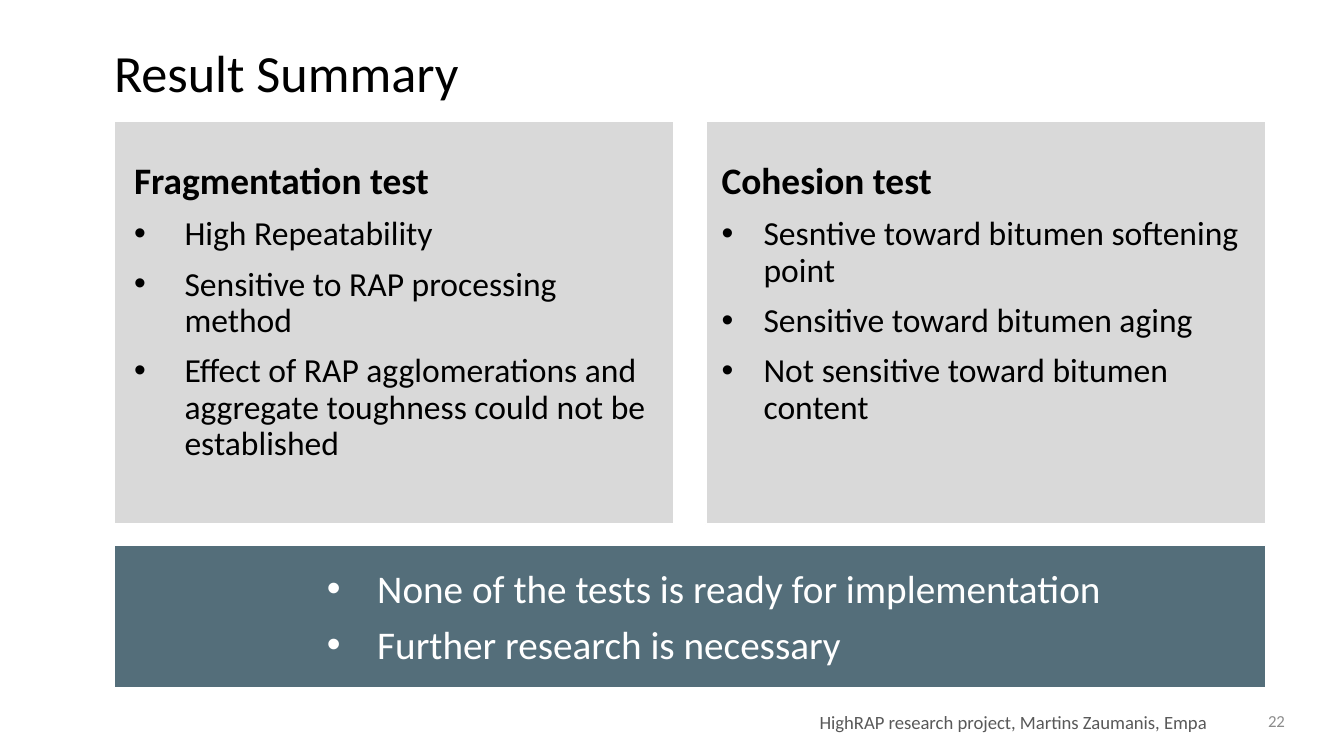
from dataclasses import dataclass

from lxml.etree import SubElement
from pptx import Presentation
from pptx.dml.color import RGBColor
from pptx.enum.shapes import MSO_SHAPE as Preset
from pptx.enum.text import MSO_ANCHOR as Anchor, PP_ALIGN as Align
from pptx.oxml.ns import qn
from pptx.slide import Slide
from pptx.util import Pt

FONT = "Calibri"
BLACK = RGBColor(0x00, 0x00, 0x00)
WHITE = RGBColor(0xFF, 0xFF, 0xFF)
PANEL_GREY = RGBColor(0xD9, 0xD9, 0xD9)
SLATE = RGBColor(0x54, 0x6E, 0x7A)
FOOTER_GREY = RGBColor(0x59, 0x59, 0x59)
NUMBER_GREY = RGBColor(0x8C, 0x8C, 0x8C)


@dataclass(frozen=True)
class Box:
    left: float
    top: float
    width: float
    height: float

    def lengths(self) -> tuple[Pt, Pt, Pt, Pt]:
        return Pt(self.left), Pt(self.top), Pt(self.width), Pt(self.height)


@dataclass(frozen=True)
class Line:
    text: str
    size: float
    color: RGBColor = BLACK
    bold: bool = False
    bullet_indent: float = 0
    spacing: float = 0.9
    align: Align = Align.LEFT


@dataclass(frozen=True)
class TestPanel:
    panel_left: float
    text_left: float
    heading: str
    findings: tuple[str, ...]
    bullet_indent: float


TEST_PANELS = (
    TestPanel(61.2, 64.8, "Fragmentation test", (
        "High Repeatability",
        "Sensitive to RAP processing method",
        "Effect of RAP agglomerations and aggregate toughness could not be established",
    ), 27),
    TestPanel(378, 379.5, "Cohesion test", (
        "Sesntive toward bitumen softening point",
        "Sensitive toward bitumen aging",
        "Not sensitive toward bitumen content",
    ), 22.5),
)
CONCLUSIONS = (
    "None of the tests is ready for implementation",
    "Further research is necessary",
)


def add_panel(slide: Slide, box: Box, color: RGBColor) -> None:
    shape = slide.shapes.add_shape(Preset.RECTANGLE, *box.lengths())
    shape.shadow.inherit = False
    shape.fill.solid()
    shape.fill.fore_color.rgb = color
    shape.line.color.rgb = WHITE
    shape.line.width = Pt(1)


def add_text(slide: Slide, box: Box, lines: list[Line], anchor: Anchor = Anchor.TOP) -> None:
    frame = slide.shapes.add_textbox(*box.lengths()).text_frame
    frame.word_wrap = True
    frame.vertical_anchor = anchor
    for index, line in enumerate(lines):
        paragraph = frame.add_paragraph() if index else frame.paragraphs[0]
        paragraph.alignment = line.align
        paragraph.line_spacing = line.spacing
        if index:
            paragraph.space_before = Pt(7.5)
        if line.bullet_indent:
            properties = paragraph._p.get_or_add_pPr()
            properties.set("marL", str(Pt(line.bullet_indent)))
            properties.set("indent", str(-Pt(line.bullet_indent)))
            SubElement(properties, qn("a:buFont"), typeface="Arial")
            SubElement(properties, qn("a:buChar"), char="•")
        run = paragraph.add_run()
        run.text = line.text
        run.font.name = FONT
        run.font.size = Pt(line.size)
        run.font.bold = line.bold
        run.font.color.rgb = line.color


def add_test_panel(slide: Slide, panel: TestPanel) -> None:
    add_panel(slide, Box(panel.panel_left, 64.8, 300, 216), PANEL_GREY)
    lines = [Line(panel.heading, 20, bold=True)]
    lines += [Line(finding, 18, bullet_indent=panel.bullet_indent) for finding in panel.findings]
    add_text(slide, Box(panel.text_left, 83.5, 294, 180), lines)


def main() -> None:
    presentation = Presentation()
    presentation.slide_width = Pt(720)
    presentation.slide_height = Pt(405)
    slide = presentation.slides.add_slide(presentation.slide_layouts[6])

    add_text(slide, Box(54, 21.6, 672, 40), [Line("Result Summary", 28)])
    for panel in TEST_PANELS:
        add_test_panel(slide, panel)

    add_panel(slide, Box(61.2, 292.3, 616.8, 76.3), SLATE)
    add_text(slide, Box(168, 301.5, 510, 66),
             [Line(text, 21, WHITE, bullet_indent=27) for text in CONCLUSIONS])

    add_text(slide, Box(432, 377.3, 223.2, 19.4),
             [Line("HighRAP research project, Martins Zaumanis, Empa", 10, FOOTER_GREY, spacing=1)])
    add_text(slide, Box(655.2, 375.1, 40.3, 21.6),
             [Line("22", 9, NUMBER_GREY, spacing=1, align=Align.RIGHT)], Anchor.MIDDLE)

    presentation.save("out.pptx")


if __name__ == "__main__":
    main()
